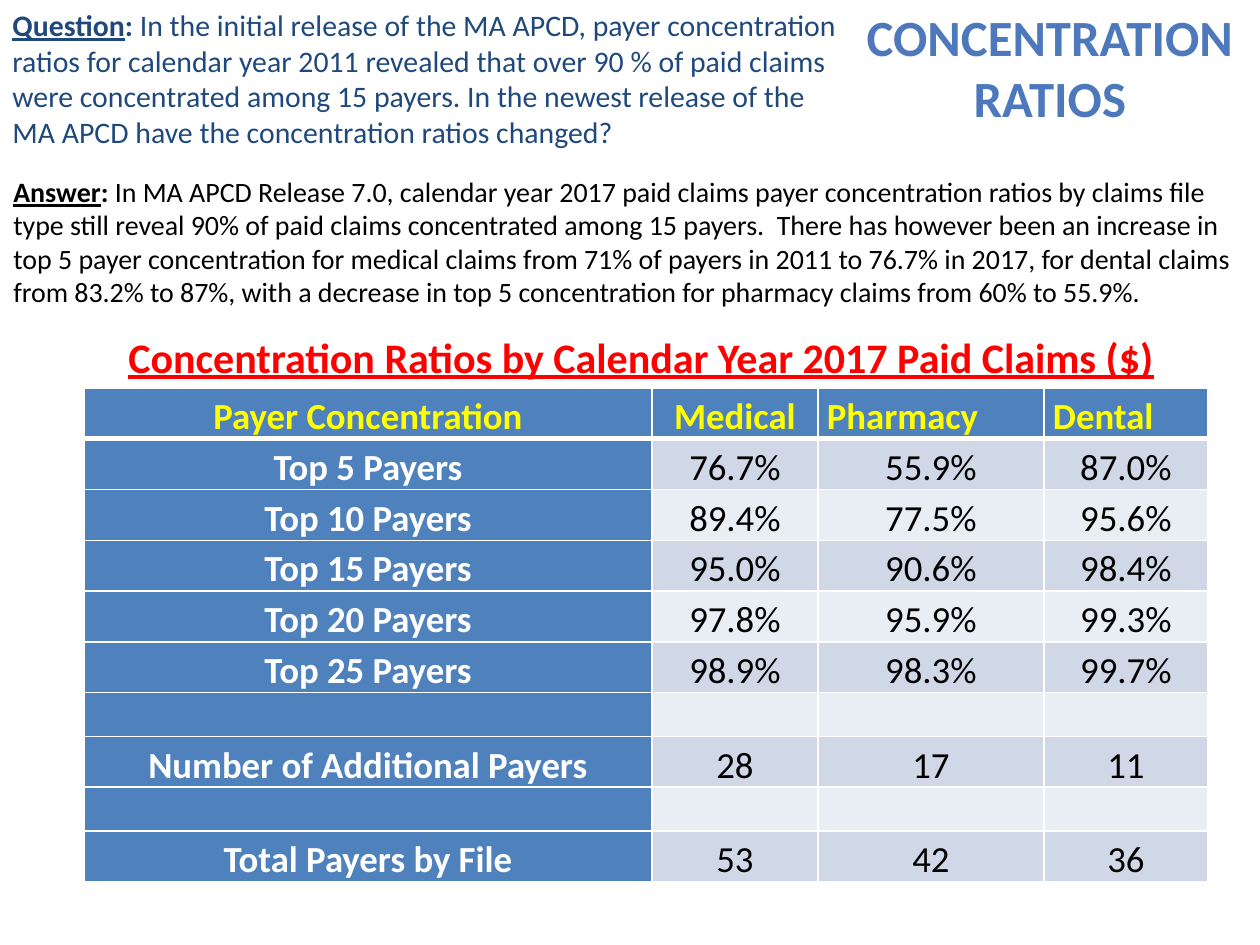
from pptx import Presentation
from pptx.dml.color import RGBColor
from pptx.enum.text import MSO_ANCHOR, PP_ALIGN
from pptx.oxml.ns import qn
from pptx.util import Emu, Pt
from lxml import etree

LEFT, MID = PP_ALIGN.LEFT, PP_ALIGN.CENTER
TOP, CORE, BASE = MSO_ANCHOR.TOP, MSO_ANCHOR.MIDDLE, MSO_ANCHOR.BOTTOM
PX = 914400 / 126

theme = {
    "font": "Calibri",
    "navy": "1F497D", "black": "000000", "red": "FF0000", "title": "4D79BC",
    "white": "FFFFFF", "yellow": "FFFF00", "blue": "4F81BD",
    "bands": ["E9EDF4", "D0D8E8"],
    "ask": 17, "reply": 16, "head": 24, "cell": 21, "name": 29,
}


def px(n):
    return Emu(round(n * PX))


def put(frame, lines, size, color, bold=False, under=False, align=LEFT,
        anchor=TOP, space=None, label=None):
    frame.word_wrap = True
    frame.vertical_anchor = anchor
    for i, line in enumerate(lines):
        para = frame.paragraphs[0] if i == 0 else frame.add_paragraph()
        para.alignment = align
        para.line_spacing = space
        parts = [(line, bold, under)]
        if label:
            parts = [(label, True, True), (": ", True, False)] + parts
        for text, heavy, lined in parts:
            if not text:
                continue
            run = para.add_run()
            run.text = text
            font = run.font
            font.name, font.size = theme["font"], Pt(theme[size])
            font.bold, font.underline = heavy, lined
            font.color.rgb = RGBColor.from_string(theme[color])


deck = Presentation()
deck.slide_width, deck.slide_height = px(1260), px(945)
slide = deck.slides.add_slide(deck.slide_layouts[6])

ask = ("In the initial release of the MA APCD, payer concentration ratios for calendar "
       "year 2011 revealed that over 90 % of paid claims were concentrated among 15 "
       "payers. In the newest release of the MA APCD have the concentration ratios changed?")
reply = ("In MA APCD Release 7.0, calendar year 2017 paid claims payer concentration "
         "ratios by claims file type still reveal 90% of paid claims concentrated among "
         "15 payers.  There has however been an increase in top 5 payer concentration for "
         "medical claims from 71% of payers in 2011 to 76.7% in 2017, for dental claims "
         "from 83.2% to 87%, with a decrease in top 5 concentration for pharmacy claims "
         "from 60% to 55.9%.")
head = "Concentration Ratios by Calendar Year 2017 Paid Claims ($)"

boxes = [
    ((1, 168, 1249, 149), [reply], dict(size="reply", color="black", label="Answer")),
    ((0, 10, 861, 136), [ask],
     dict(size="ask", color="navy", label="Question", anchor=CORE)),
    ((116, 325, 1071, 63), [head], dict(size="head", color="red", bold=True, under=True)),
    ((840, 0, 420, 136), ["CONCENTRATION", "RATIOS"],
     dict(size="name", color="title", bold=True, align=MID)),
]
for area, lines, style in boxes:
    box = slide.shapes.add_textbox(*[px(n) for n in area])
    put(box.text_frame, lines, **style)

rows = [
    ["Payer Concentration", "Medical", "Pharmacy", "Dental"],
    ["Top 5 Payers", "76.7%", "55.9%", "87.0%"],
    ["Top 10 Payers", "89.4%", "77.5%", "95.6%"],
    ["Top 15 Payers", "95.0%", "90.6%", "98.4%"],
    ["Top 20 Payers", "97.8%", "95.9%", "99.3%"],
    ["Top 25 Payers", "98.9%", "98.3%", "99.7%"],
    [""] * 4,
    ["Number of Additional Payers", "28", "17", "11"],
    [""] * 4,
    ["Total Payers by File", "53", "42", "36"],
]
wide = [568, 166, 226, 164]
tall = [50 if row[0] else 44 for row in rows]
table = slide.shapes.add_table(len(rows), len(wide), px(84), px(388),
                               px(sum(wide)), px(sum(tall))).table
for col, width in zip(table.columns, wide):
    col.width = px(width)
for r, row in enumerate(rows):
    table.rows[r].height = px(tall[r])
    for c, text in enumerate(row):
        cell = table.cell(r, c)
        cell.margin_left = cell.margin_right = px(9)
        cell.margin_top = cell.margin_bottom = 0
        cell.vertical_anchor = BASE
        thick = {(0, "B"), (1, "T")}
        for side in "LRTB":
            edge = etree.SubElement(cell._tc.get_or_add_tcPr(), qn("a:ln" + side))
            edge.set("w", str(Pt(3 if (r, side) in thick else 1)))
            paint = etree.SubElement(edge, qn("a:solidFill"))
            etree.SubElement(paint, qn("a:srgbClr")).set("val", theme["white"])
        main = r == 0 or c == 0
        cell.fill.solid()
        cell.fill.fore_color.rgb = RGBColor.from_string(
            theme["blue"] if main else theme["bands"][r % 2])
        color = "yellow" if r == 0 else "white" if c == 0 else "black"
        put(cell.text_frame, [text], "cell", color, bold=main, anchor=BASE,
            align=LEFT if r == 0 and c > 1 else MID, space=1.15)

deck.save("out.pptx")
